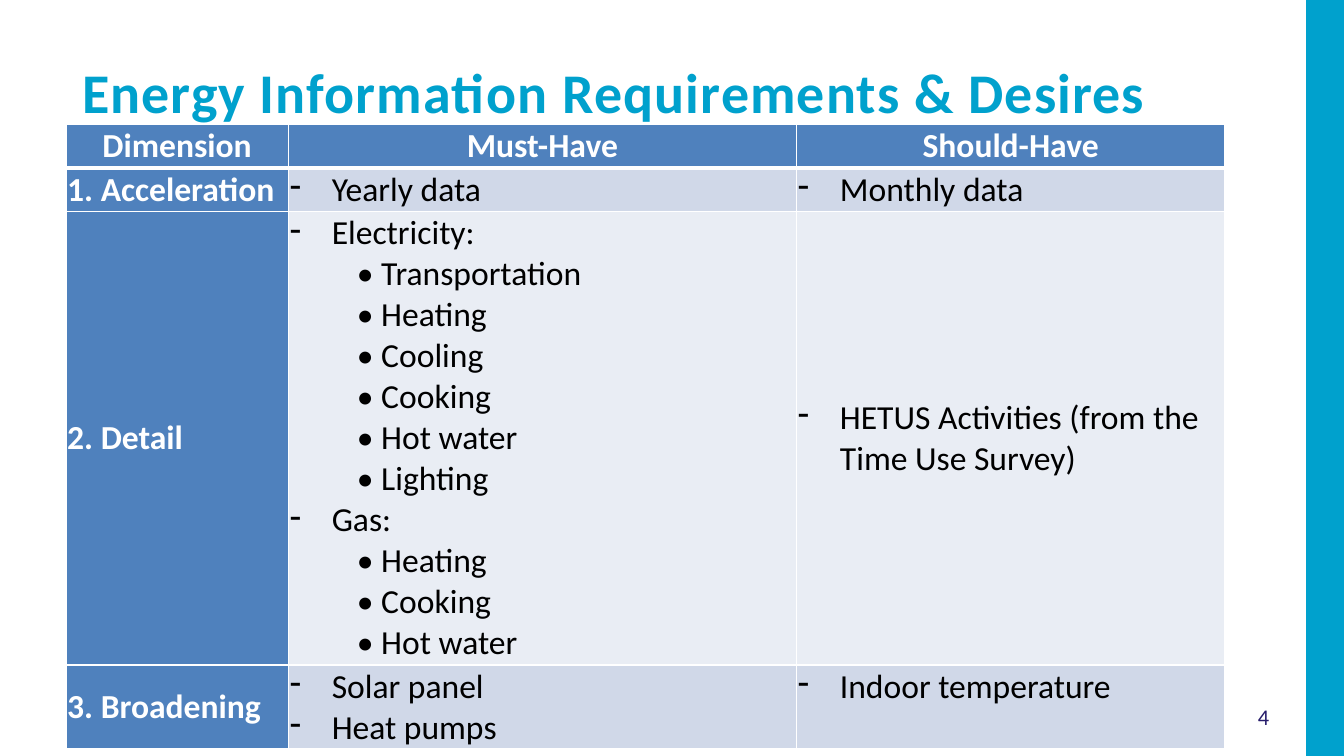
from lxml import etree
from pptx import Presentation
from pptx import util as u
from pptx.dml.color import RGBColor
from pptx.enum import shapes, text
from pptx.oxml import ns

PX = 9525
FONT = "Calibri"
CYAN = RGBColor(0x00, 0xA1, 0xCD)
NAVY = RGBColor(0x27, 0x1D, 0x6C)
BLUE = RGBColor(0x4F, 0x81, 0xBD)
BAND_DARK = RGBColor(0xD0, 0xD8, 0xE8)
BAND_LIGHT = RGBColor(0xE9, 0xED, 0xF4)
WHITE = RGBColor(0xFF, 0xFF, 0xFF)
BLACK = RGBColor(0x00, 0x00, 0x00)

COLUMN_WIDTHS = [159, 363, 306]
ROW_HEIGHTS = [31, 31, 324, 60]
HEADERS = ["Dimension", "Must-Have", "Should-Have"]
DASH, SUBLIST = "dash", "sublist"
REQUIREMENTS = [
    ("1. Acceleration", [(DASH, "Yearly data")], [(DASH, "Monthly data")]),
    (
        "2. Detail",
        [
            (DASH, "Electricity:"),
            (SUBLIST, "• Transportation"),
            (SUBLIST, "• Heating\n• Cooling\n• Cooking\n• Hot water\n• Lighting"),
            (DASH, "Gas:"),
            (SUBLIST, "• Heating\n• Cooking\n• Hot water"),
        ],
        [(DASH, "HETUS Activities (from the Time Use Survey)")],
    ),
    (
        "3. Broadening",
        [(DASH, "Solar panel"), (DASH, "Heat pumps")],
        [(DASH, "Indoor temperature")],
    ),
]


def box(left, top, width, height):
    return [value * PX for value in (left, top, width, height)]


def set_font(paragraph, size, color, bold=False):
    font = paragraph.font
    font.name = FONT
    font.size = u.Pt(size)
    font.bold = bold
    font.color.rgb = color


def add_side_band(slide, left, top, width, height):
    band = slide.shapes.add_shape(
        shapes.MSO_SHAPE.RECTANGLE, *box(left, top, width, height))
    band.shadow.inherit = False
    band.fill.solid()
    band.fill.fore_color.rgb = CYAN
    band.line.fill.background()


def add_page_number(slide, left, top, width, height):
    frame = slide.shapes.add_textbox(*box(left, top, width, height)).text_frame
    frame.word_wrap = True
    frame.vertical_anchor = text.MSO_ANCHOR.MIDDLE
    paragraph = frame.paragraphs[0]
    paragraph.text = "4"
    paragraph.alignment = text.PP_ALIGN.CENTER
    set_font(paragraph, 12, NAVY)


def place_title(slide, left, top, width, height):
    title = slide.shapes.title
    title.left, title.top, title.width, title.height = box(left, top, width, height)
    frame = title.text_frame
    frame.auto_size = text.MSO_AUTO_SIZE.NONE
    frame.vertical_anchor = text.MSO_ANCHOR.TOP
    paragraph = frame.paragraphs[0]
    paragraph.text = "Energy Information Requirements & Desires"
    paragraph.alignment = text.PP_ALIGN.LEFT
    set_font(paragraph, 30, CYAN, True)
    paragraph.runs[0].font._element.set("spc", "60")


def set_borders(cell, bottom_width):
    properties = cell._tc.get_or_add_tcPr()
    for side, width in (("L", 1), ("R", 1), ("T", 1), ("B", bottom_width)):
        line = etree.SubElement(properties, ns.qn(f"a:ln{side}"), w=str(u.Pt(width)))
        fill = etree.SubElement(line, ns.qn("a:solidFill"))
        etree.SubElement(fill, ns.qn("a:srgbClr"), val=str(WHITE))


def format_cell(cell, color, bottom_width=1):
    cell.margin_left = cell.margin_right = PX
    cell.margin_top = cell.margin_bottom = PX
    cell.vertical_anchor = text.MSO_ANCHOR.MIDDLE
    set_borders(cell, bottom_width)
    cell.fill.solid()
    cell.fill.fore_color.rgb = color


def write_label(cell, label, alignment):
    paragraph = cell.text_frame.paragraphs[0]
    paragraph.text = label
    paragraph.alignment = alignment
    set_font(paragraph, 18, WHITE, True)


def write_items(cell, items):
    frame = cell.text_frame
    for index, (kind, item) in enumerate(items):
        paragraph = frame.paragraphs[0] if index == 0 else frame.add_paragraph()
        paragraph.text = item
        properties = paragraph._p.get_or_add_pPr()
        if kind == DASH:
            properties.set("marL", str(30 * PX))
            properties.set("indent", str(-30 * PX))
            etree.SubElement(properties, ns.qn("a:buChar"), char="-")
        else:
            paragraph.level = 1
            properties.set("marL", str(48 * PX))
            properties.set("indent", "0")
            etree.SubElement(properties, ns.qn("a:buNone"))
        set_font(paragraph, 18, BLACK)


def add_requirements_table(slide, left, top):
    frame = slide.shapes.add_table(
        len(ROW_HEIGHTS), len(COLUMN_WIDTHS),
        *box(left, top, sum(COLUMN_WIDTHS), sum(ROW_HEIGHTS)))
    table = frame.table
    for column, width in zip(table.columns, COLUMN_WIDTHS):
        column.width = width * PX
    for row, height in zip(table.rows, ROW_HEIGHTS):
        row.height = height * PX
    for column_index, header in enumerate(HEADERS):
        cell = table.cell(0, column_index)
        format_cell(cell, BLUE, 3)
        write_label(cell, header, text.PP_ALIGN.CENTER)
    for row_index, (dimension, *item_lists) in enumerate(REQUIREMENTS, 1):
        cell = table.cell(row_index, 0)
        format_cell(cell, BLUE)
        write_label(cell, dimension, text.PP_ALIGN.LEFT)
        band = BAND_DARK if row_index % 2 else BAND_LIGHT
        for column_index, items in enumerate(item_lists, 1):
            cell = table.cell(row_index, column_index)
            format_cell(cell, band)
            write_items(cell, items)
    table.cell(3, 2).vertical_anchor = text.MSO_ANCHOR.TOP


def main():
    presentation = Presentation()
    presentation.slide_width = 960 * PX
    presentation.slide_height = 540 * PX
    slide = presentation.slides.add_slide(presentation.slide_layouts[5])
    add_side_band(slide, 933, 0, 27, 540)
    add_page_number(slide, 872, 495, 61, 33)
    place_title(slide, 49, 36, 802, 53)
    add_requirements_table(slide, 47, 89)
    presentation.save("out.pptx")


if __name__ == "__main__":
    main()
